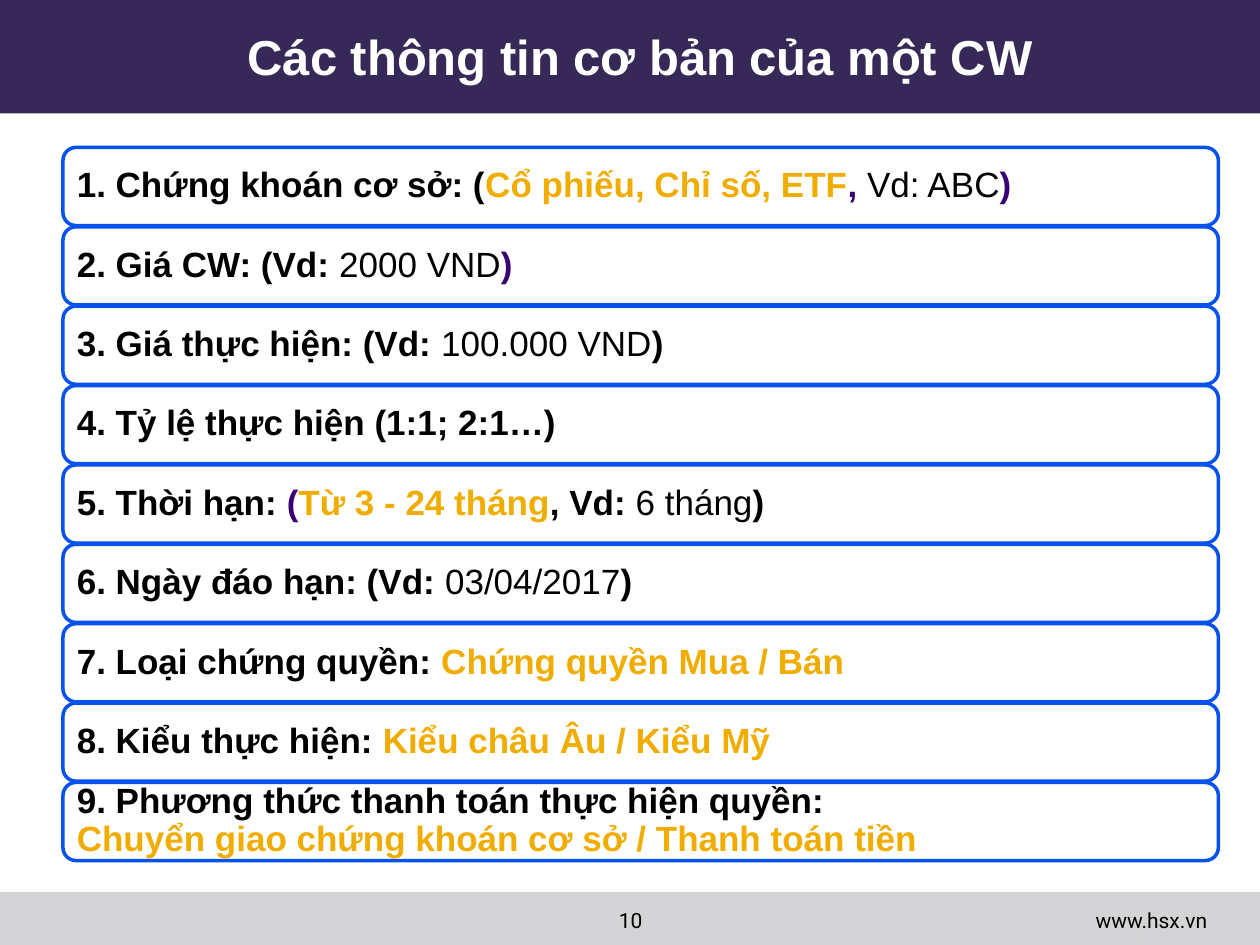
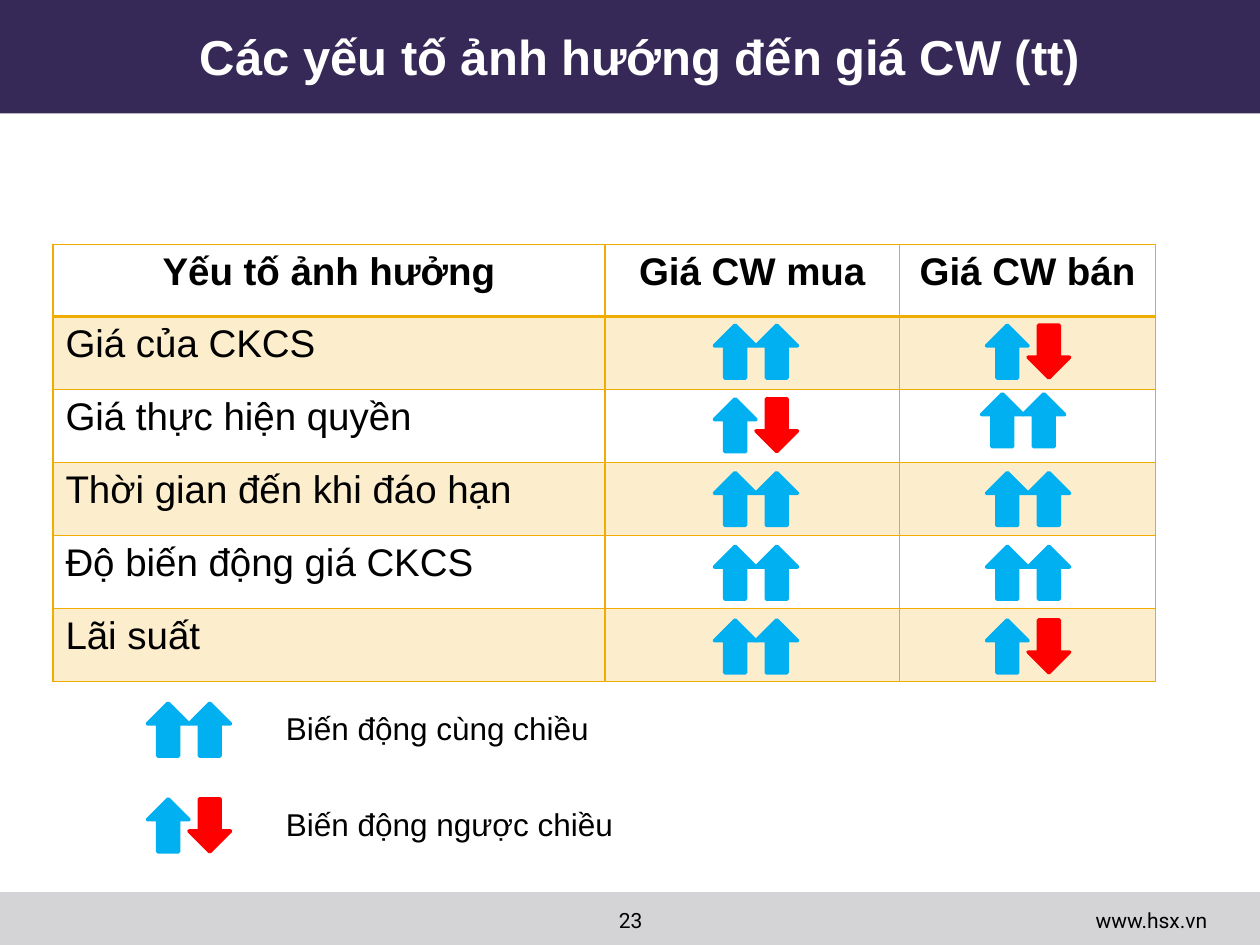
from typing import NamedTuple

from lxml import etree
from pptx import Presentation
from pptx import util as u
from pptx.dml.color import RGBColor
from pptx.enum import shapes, text
from pptx.oxml import ns

Inches = u.Inches
COLORS = {
    "band": "372957",
    "footer": "D4D4D6",
    "white": "FFFFFF",
    "black": "000000",
    "gold": "F0AD00",
    "violet": "380070",
    "outline": "0652EA",
    "up": "00B0F0",
    "down": "FF0000",
}
BODY_FONT = "Arial"
FOOTER_FONT = "Roboto"
ALIGN = text.PP_ALIGN
ANCHOR = text.MSO_ANCHOR


class Box(NamedTuple):
    left: float
    top: float
    width: float
    height: float

    def lengths(self) -> list:
        return [Inches(value) for value in self]


class Piece(NamedTuple):
    text: str
    color: str = "black"
    bold: bool = True


class ArrowPair(NamedTuple):
    left: float
    top: float
    same_direction: bool


BREAK = Piece("\n")
CLOSE = Piece(")")
VIOLET_CLOSE = Piece(")", "violet")
CW_DETAILS = [
    [Piece("1. Chứng khoán cơ sở: ("), Piece("Cổ phiếu, Chỉ số, ETF", "gold"),
     Piece(", ", "violet"), Piece("Vd: ABC", bold=False), VIOLET_CLOSE],
    [Piece("2. Giá CW: (Vd: "), Piece("2000 VND", bold=False), VIOLET_CLOSE],
    [Piece("3. Giá thực hiện: (Vd: "), Piece("100.000 VND", bold=False), CLOSE],
    [Piece("4. Tỷ lệ thực hiện (1:1; 2:1…)")],
    [Piece("5. Thời hạn: "), Piece("(", "violet"), Piece("Từ 3 - 24 tháng", "gold"),
     Piece(", Vd: "), Piece("6 tháng", bold=False), CLOSE],
    [Piece("6. Ngày đáo hạn: (Vd: "), Piece("03/04/2017", bold=False), CLOSE],
    [Piece("7. Loại chứng quyền: "), Piece("Chứng quyền Mua / Bán", "gold")],
    [Piece("8. Kiểu thực hiện: "), Piece("Kiểu châu Âu / Kiểu Mỹ", "gold")],
    [Piece("9. Phương thức thanh toán thực hiện quyền:"), BREAK,
     Piece("Chuyển giao chứng khoán cơ sở / Thanh toán tiền", "gold")],
]

HEADERS = ["Yếu tố ảnh hưởng", "Giá CW mua", "Giá CW bán"]
FACTORS = {
    "Giá của CKCS": (True, False),
    "Giá thực hiện quyền": (False, True),
    "Thời gian đến khi đáo hạn": (True, True),
    "Độ biến động giá CKCS": (True, True),
    "Lãi suất": (True, False),
}
COLUMN_WIDTHS = [4.38, 2.34, 2.03]
HEADER_HEIGHT, ROW_HEIGHT = 0.57, 0.58
ARROW_LEFTS = [5.67, 7.83]
ARROW_TOP, ARROW_STEP = 2.58, 0.585
ARROW_WIDTH, ARROW_HEIGHT = 0.33, 0.42
LEGEND = [
    ("Biến động cùng chiều", True, 5.58),
    ("Biến động ngược chiều", False, 6.34),
]


def rgb(name: str) -> RGBColor:
    return RGBColor.from_string(COLORS[name])


def style_font(font, size: float, color: str, bold: bool = False, name: str = BODY_FONT) -> None:
    font.size = u.Pt(size)
    font.name = name
    font.bold = bold
    font.color.rgb = rgb(color)


def add_label(slide, box: Box, label: str, size: float, color: str = "black",
              bold: bool = False, name: str = BODY_FONT, align=ALIGN.LEFT, anchor=ANCHOR.TOP) -> None:
    text_frame = slide.shapes.add_textbox(*box.lengths()).text_frame
    text_frame.word_wrap = True
    text_frame.vertical_anchor = anchor
    text_frame.text = label
    paragraph = text_frame.paragraphs[0]
    paragraph.alignment = align
    style_font(paragraph.runs[0].font, size, color, bold, name)


def add_preset(container, preset, box: Box, fill: str | None = None, line: str | None = None):
    shape = container.shapes.add_shape(preset, *box.lengths())
    shape.shadow.inherit = False
    if fill:
        shape.fill.solid()
        shape.fill.fore_color.rgb = rgb(fill)
    else:
        shape.fill.background()
    if line:
        shape.line.color.rgb = rgb(line)
        shape.line.width = u.Pt(2)
    else:
        shape.line.fill.background()
    return shape


def start_slide(presentation, title: str, number: str):
    slide = presentation.slides.add_slide(presentation.slide_layouts[6])
    rectangle = shapes.MSO_SHAPE.RECTANGLE
    add_preset(slide, rectangle, Box(0, 0, 10, 0.9), "band")
    add_preset(slide, rectangle, Box(0, 7.08, 10, 0.42), "footer")
    add_label(slide, Box(0.58, 0.13, 9, 0.62), title, 28, "white", True,
              align=ALIGN.CENTER, anchor=ANCHOR.MIDDLE)
    add_label(slide, Box(4.17, 7.15, 1.67, 0.35), number, 12, name=FOOTER_FONT, align=ALIGN.CENTER)
    add_label(slide, Box(7.35, 7.15, 2.33, 0.34), "www.hsx.vn", 12, name=FOOTER_FONT, align=ALIGN.RIGHT)
    return slide


def add_detail(slide, box: Box, pieces: list[Piece]) -> None:
    shape = add_preset(slide, shapes.MSO_SHAPE.ROUNDED_RECTANGLE, box, line="outline")
    text_frame = shape.text_frame
    text_frame.word_wrap = True
    text_frame.vertical_anchor = ANCHOR.MIDDLE
    text_frame.margin_left = text_frame.margin_right = Inches(0.08)
    text_frame.margin_top = text_frame.margin_bottom = Inches(0.08)
    paragraph = text_frame.paragraphs[0]
    paragraph.alignment = ALIGN.LEFT
    paragraph.line_spacing = 0.9
    for piece in pieces:
        if piece == BREAK:
            paragraph.add_line_break()
            continue
        run = paragraph.add_run()
        run.text = piece.text
        style_font(run.font, 20, piece.color, piece.bold)


def style_cell(cell, row: int) -> None:
    properties = cell._tc.get_or_add_tcPr()
    for side in ("L", "R", "T", "B"):
        heavy = (row == 0 and side == "B") or (row == 1 and side == "T")
        border = etree.SubElement(properties, ns.qn(f"a:ln{side}"), w=str(u.Pt(2 if heavy else 1)))
        fill = etree.SubElement(border, ns.qn("a:solidFill"))
        etree.SubElement(fill, ns.qn("a:srgbClr"), val=COLORS["gold"])
    if row % 2:
        cell.fill.solid()
        cell.fill.fore_color.rgb = rgb("gold")
        color = properties.find(f"{ns.qn('a:solidFill')}/{ns.qn('a:srgbClr')}")
        etree.SubElement(color, ns.qn("a:alpha"), val="20000")
    else:
        cell.fill.background()


def add_factor_table(slide) -> None:
    rows = [HEADERS] + [[factor, "", ""] for factor in FACTORS]
    box = Box(0.42, 1.94, sum(COLUMN_WIDTHS), HEADER_HEIGHT + ROW_HEIGHT * len(FACTORS))
    table = slide.shapes.add_table(len(rows), len(HEADERS), *box.lengths()).table
    for column, width in zip(table.columns, COLUMN_WIDTHS):
        column.width = Inches(width)
    for row, labels in enumerate(rows):
        table.rows[row].height = Inches(ROW_HEIGHT if row else HEADER_HEIGHT)
        for column, label in enumerate(labels):
            cell = table.cell(row, column)
            style_cell(cell, row)
            if label:
                cell.text_frame.text = label
                paragraph = cell.text_frame.paragraphs[0]
                paragraph.alignment = ALIGN.LEFT if row else ALIGN.CENTER
                style_font(paragraph.runs[0].font, 22, "black", row == 0)


def add_arrow_pair(slide, pair: ArrowPair) -> None:
    group = slide.shapes.add_group_shape()
    for index, rising in enumerate((True, pair.same_direction)):
        preset = shapes.MSO_SHAPE.UP_ARROW if rising else shapes.MSO_SHAPE.DOWN_ARROW
        color = "up" if rising else "down"
        box = Box(pair.left + index * ARROW_WIDTH, pair.top, ARROW_WIDTH, ARROW_HEIGHT)
        add_preset(group, preset, box, color, color)


def build_details_slide(presentation) -> None:
    slide = start_slide(presentation, "Các thông tin cơ bản của một CW", "10")
    for index, pieces in enumerate(CW_DETAILS):
        add_detail(slide, Box(0.5, 1.17 + index * 0.63, 9.17, 0.62), pieces)


def build_factors_slide(presentation) -> None:
    slide = start_slide(presentation, "Các yếu tố ảnh hướng đến giá CW (tt)", "23")
    add_factor_table(slide)
    for row, effects in enumerate(FACTORS.values()):
        for column, same_direction in enumerate(effects):
            nudge = 0.04 if (row, column) == (1, 1) else 0
            add_arrow_pair(slide, ArrowPair(ARROW_LEFTS[column] - nudge,
                                            ARROW_TOP + row * ARROW_STEP - nudge, same_direction))
    for label, same_direction, top in LEGEND:
        add_arrow_pair(slide, ArrowPair(1.17, top, same_direction))
        add_label(slide, Box(2.17, top, 4, 0.4), label, 18)


def main() -> None:
    presentation = Presentation()
    presentation.slide_width = Inches(10)
    presentation.slide_height = Inches(7.5)
    build_details_slide(presentation)
    build_factors_slide(presentation)
    presentation.save("out.pptx")


if __name__ == "__main__":
    main()
